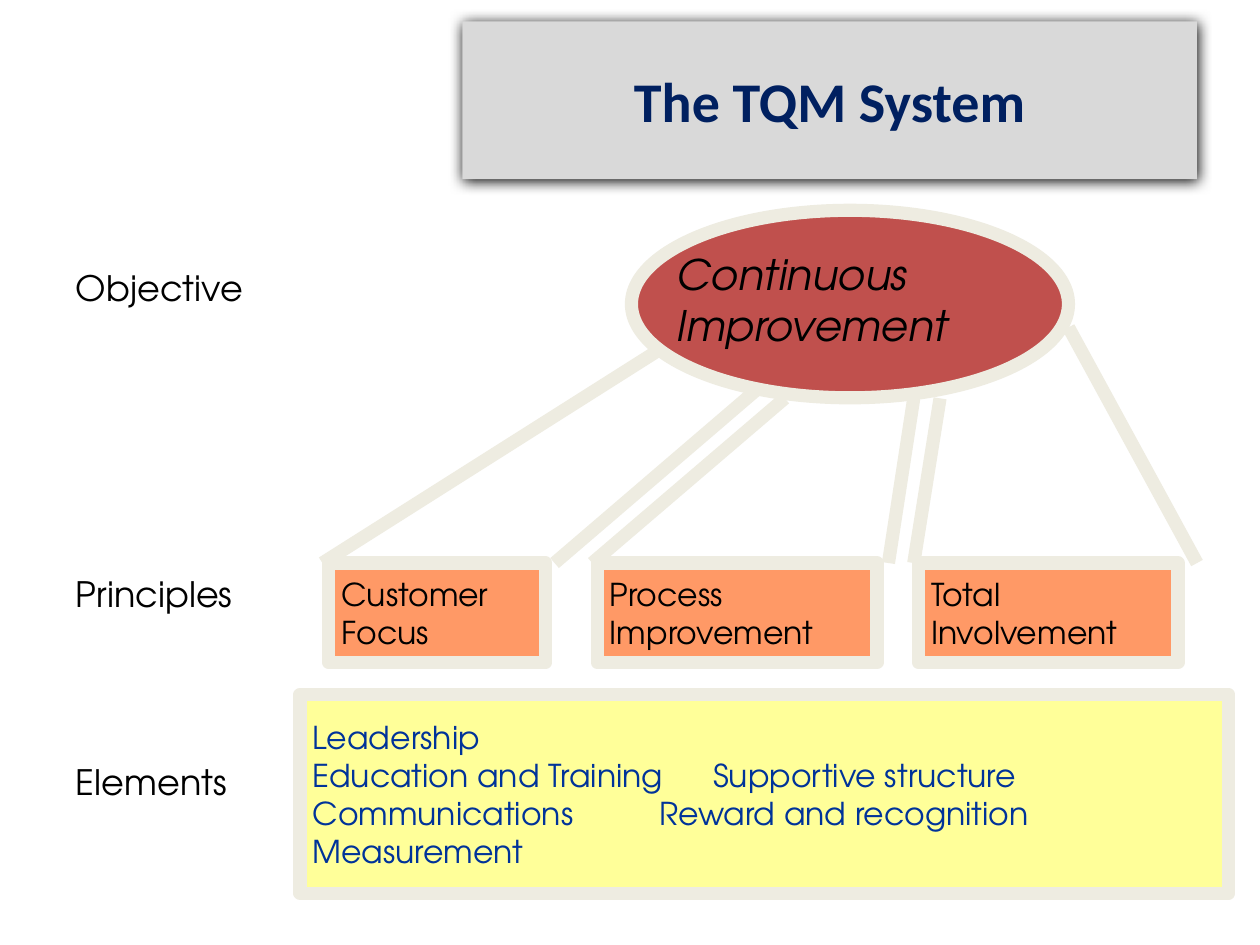
from lxml import etree
from pptx import Presentation
from pptx import util as u
from pptx.dml.color import RGBColor
from pptx.enum import shapes, text
from pptx.oxml import ns


def color(hex_value):
    return RGBColor.from_string(hex_value)


def add_xml(parent, tag, **attributes):
    return etree.SubElement(parent, ns.qn(tag), attributes)


class Diagram:
    """Style of the diagram and the slide it is drawn on."""
    font = "TeX Gyre Adventor"
    frame_color = "EEECE1"
    frame_width = u.Pt(7.5)

    def __init__(self, slide):
        self.slide = slide

    def title(self, words, left, top, width, height):
        title = self.slide.shapes.title
        title.left, title.top = u.Cm(left), u.Cm(top)
        title.width, title.height = u.Cm(width), u.Cm(height)
        title.fill.solid()
        title.fill.fore_color.rgb = color("D9D9D9")
        effects = add_xml(title._element.spPr, "a:effectLst")
        shadow = add_xml(effects, "a:outerShdw", blurRad=str(u.Pt(8.5)),
                         dist=str(u.Pt(1)), dir="5400000",
                         algn="ctr", rotWithShape="0")
        add_xml(shadow, "a:srgbClr", val="000000")
        self.set_text(title, [words], 32, "002060", font="Calibri", bold=True,
                      align=text.PP_ALIGN.CENTER)

    def set_text(self, shape, lines, size, ink, font=None, bold=False,
                 italic=False, align=text.PP_ALIGN.LEFT):
        frame = shape.text_frame
        frame.word_wrap = True
        frame.auto_size = text.MSO_AUTO_SIZE.NONE
        frame.vertical_anchor = text.MSO_ANCHOR.MIDDLE
        frame.text = "\n".join(lines)
        for paragraph in frame.paragraphs:
            paragraph.alignment = align
            paragraph.font.name = font or self.font
            paragraph.font.size = u.Pt(size)
            paragraph.font.bold = bold
            paragraph.font.italic = italic
            paragraph.font.color.rgb = color(ink)

    def framed(self, kind, fill, left, top, width, height):
        shape = self.slide.shapes.add_shape(
            kind, u.Cm(left), u.Cm(top), u.Cm(width), u.Cm(height))
        shape.shadow.inherit = False
        shape.fill.solid()
        shape.fill.fore_color.rgb = color(fill)
        shape.line.color.rgb = color(self.frame_color)
        shape.line.width = self.frame_width
        return shape

    def box(self, lines, fill, ink, left, top, width, height):
        box = self.framed(shapes.MSO_SHAPE.RECTANGLE, fill,
                          left, top, width, height)
        self.set_text(box, lines, 18, ink)
        return box

    def label(self, lines, size, left, top, width, height, italic=False):
        label = self.slide.shapes.add_textbox(
            u.Cm(left), u.Cm(top), u.Cm(width), u.Cm(height))
        self.set_text(label, lines, size, "000000", italic=italic)

    def ray(self, x1, y1, x2, y2):
        ray = self.slide.shapes.add_connector(
            shapes.MSO_CONNECTOR.STRAIGHT,
            u.Cm(x1), u.Cm(y1), u.Cm(x2), u.Cm(y2))
        ray.line.color.rgb = color(self.frame_color)
        ray.line.width = self.frame_width
        add_xml(ray._element.spPr, "a:effectLst")

    def tab_stop(self, paragraph, position):
        properties = paragraph._p.get_or_add_pPr()
        tabs = etree.Element(ns.qn("a:tabLst"))
        add_xml(tabs, "a:tab", pos=str(u.Cm(position)), algn="l")
        properties.find(ns.qn("a:defRPr")).addprevious(tabs)


def main():
    deck = Presentation()
    deck.slide_width, deck.slide_height = u.Cm(25.4), u.Cm(19.05)
    diagram = Diagram(deck.slides.add_slide(deck.slide_layouts[5]))
    diagram.title("The TQM System", 9.32, 0.43, 14.81, 3.18)

    # Objective
    diagram.framed(shapes.MSO_SHAPE.OVAL, "C0504D", 12.73, 4.24, 8.81, 3.78)

    # Principles
    principles_top = 11.35
    for lines, left, width in [
        (["Customer", "Focus"], 6.63, 4.37),
        (["Process", "Improvement"], 12.04, 5.64),
        (["Total", "Involvement"], 18.52, 5.23),
    ]:
        diagram.box(lines, "FF9966", "000000",
                    left, principles_top, width, 2.01)

    # Elements, with a second column set by tab stops
    elements = diagram.box(
        ["Leadership",
         "Education and Training\tSupportive structure",
         "Communications\tReward and recognition",
         "Measurement"],
        "FFFF99", "003399", 6.05, 14, 18.72, 4.01)
    for row, position in [(1, 8.08), (2, 6.99)]:
        diagram.tab_stop(elements.text_frame.paragraphs[row], position)

    # Rays from the principles up to the objective
    for foot, x, y in [
        (6.5, 13.23, 7.09), (11.18, 15.32, 7.8), (17.91, 18.42, 8.03),
        (11.94, 15.82, 8.03), (24.13, 21.54, 6.6), (18.42, 18.95, 8.03),
    ]:
        diagram.ray(foot, principles_top, x, y)

    # Objective wording and level names
    diagram.label(["Continuous", "Improvement"], 24,
                  13.39, 4.75, 7.29, 2.57, italic=True)
    for level, top in [("Objective", 5.18), ("Principles", principles_top),
                       ("Elements", 15.14)]:
        diagram.label([level], 20, 1.28, top, 4.7, 1.24)

    deck.save("out.pptx")


if __name__ == "__main__":
    main()
